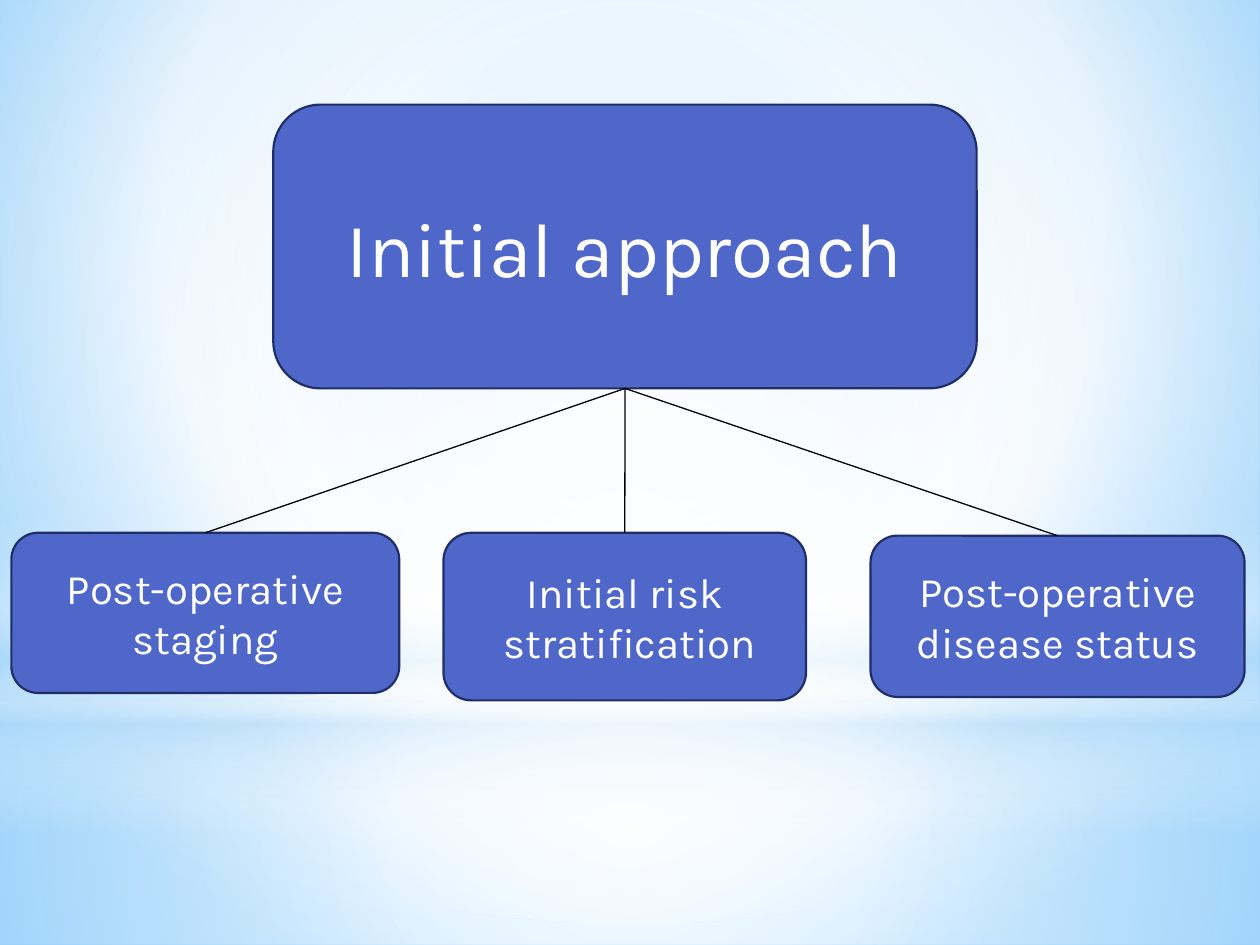
from lxml.etree import SubElement
from pptx import Presentation
from pptx.dml.color import RGBColor
from pptx.enum.shapes import MSO_CONNECTOR, MSO_SHAPE
from pptx.enum.text import MSO_ANCHOR, PP_ALIGN
from pptx.oxml.ns import qn
from pptx.util import Cm, Pt

COLORS = {
    "box": "4E67C8",
    "border": "1F2E69",
    "text": "FFFFFF",
    "line": "000000",
    "white": "FFFFFF",
    "sky": "9ED5FF",
    "deep": "5BB9FF",
    "mist": "B4DCFA",
}
CENTER = (50, 50, 50, 50)
TOP, BOTTOM = 0, 2


class SlideBuilder:
    font = "Karla"

    def __init__(self, slide):
        self.slide = slide

    def color(self, name):
        return RGBColor.from_string(COLORS[name])

    def gradient(self, fill, element, stops, focus=None):
        fill.gradient()
        gradient = element.xpath(".//a:gradFill")[0]
        for child in list(gradient):
            gradient.remove(child)
        stop_list = SubElement(gradient, qn("a:gsLst"))
        for position, name, opacity in stops:
            stop = SubElement(stop_list, qn("a:gs"), pos=str(position * 1000))
            color = SubElement(stop, qn("a:srgbClr"), val=COLORS[name])
            if opacity < 100:
                SubElement(color, qn("a:alpha"), val=str(opacity * 1000))
        if focus:
            radial = SubElement(gradient, qn("a:path"), {"path": "circle"})
            sides = {side: str(value * 1000) for side, value in zip("ltrb", focus)}
            SubElement(radial, qn("a:fillToRect"), sides)
        else:
            SubElement(gradient, qn("a:lin"), ang="5400000", scaled="0")

    def background(self, stops, focus):
        self.gradient(self.slide.background.fill, self.slide.element, stops, focus)

    def shape(self, kind, left, top, width, height):
        shape = self.slide.shapes.add_shape(kind, Cm(left), Cm(top), Cm(width), Cm(height))
        shape.shadow.inherit = False
        return shape

    def glow(self, kind, top, height, stops, focus=None):
        shape = self.shape(kind, 0, top, 25.4, height)
        shape.line.fill.background()
        self.gradient(shape.fill, shape.element, stops, focus)

    def box(self, text, left, top, width, height, size=24):
        shape = self.shape(MSO_SHAPE.ROUNDED_RECTANGLE, left, top, width, height)
        shape.fill.solid()
        shape.fill.fore_color.rgb = self.color("box")
        shape.line.color.rgb = self.color("border")
        shape.line.width = Pt(1.25)
        frame = shape.text_frame
        frame.word_wrap = True
        frame.vertical_anchor = MSO_ANCHOR.MIDDLE
        paragraph = frame.paragraphs[0]
        paragraph.alignment = PP_ALIGN.CENTER
        paragraph._p.get_or_add_pPr().set("rtl", "1")
        run = paragraph.add_run()
        run.text = text
        run.font.name = self.font
        run.font.size = Pt(size)
        run.font.color.rgb = self.color("text")
        return shape

    def connect(self, parent, child):
        connector = self.slide.shapes.add_connector(MSO_CONNECTOR.STRAIGHT, 0, 0, 0, 0)
        connector.begin_connect(parent, BOTTOM)
        connector.end_connect(child, TOP)
        connector.line.color.rgb = self.color("line")
        connector.line.width = Pt(0.75)
        SubElement(connector.element.spPr, qn("a:effectLst"))


def main():
    presentation = Presentation()
    presentation.slide_width, presentation.slide_height = Cm(25.4), Cm(19.05)
    builder = SlideBuilder(presentation.slides.add_slide(presentation.slide_layouts[6]))

    builder.background(
        [(0, "sky", 100), (60, "white", 100), (100, "deep", 100)], (20, 10, 20, 60))
    builder.glow(MSO_SHAPE.RECTANGLE, 14.17, 4.88,
                 [(0, "white", 91), (37, "white", 76), (100, "mist", 79)], CENTER)
    builder.glow(MSO_SHAPE.RECTANGLE, 0, 14.17,
                 [(0, "white", 89), (48, "white", 62), (100, "mist", 79)], CENTER)
    builder.glow(MSO_SHAPE.RECTANGLE, 10.46, 6.35,
                 [(0, "white", 0), (29, "white", 30), (45, "mist", 40),
                  (55, "white", 26), (65, "mist", 60), (100, "white", 0)])
    builder.glow(MSO_SHAPE.OVAL, 4.45, 14.17,
                 [(0, "white", 100), (56, "white", 0)], CENTER)

    approach = builder.box("Initial approach", 5.51, 2.11, 14.18, 5.72, size=44)
    risk = builder.box("Initial risk stratification ", 8.94, 10.74, 7.31, 3.38)
    staging = builder.box("Post-operative staging", 0.23, 10.74, 7.82, 3.23)
    status = builder.box("Post-operative disease status", 17.55, 10.8, 7.54, 3.25)
    for child in (status, risk, staging):
        builder.connect(approach, child)

    presentation.save("out.pptx")


if __name__ == "__main__":
    main()
